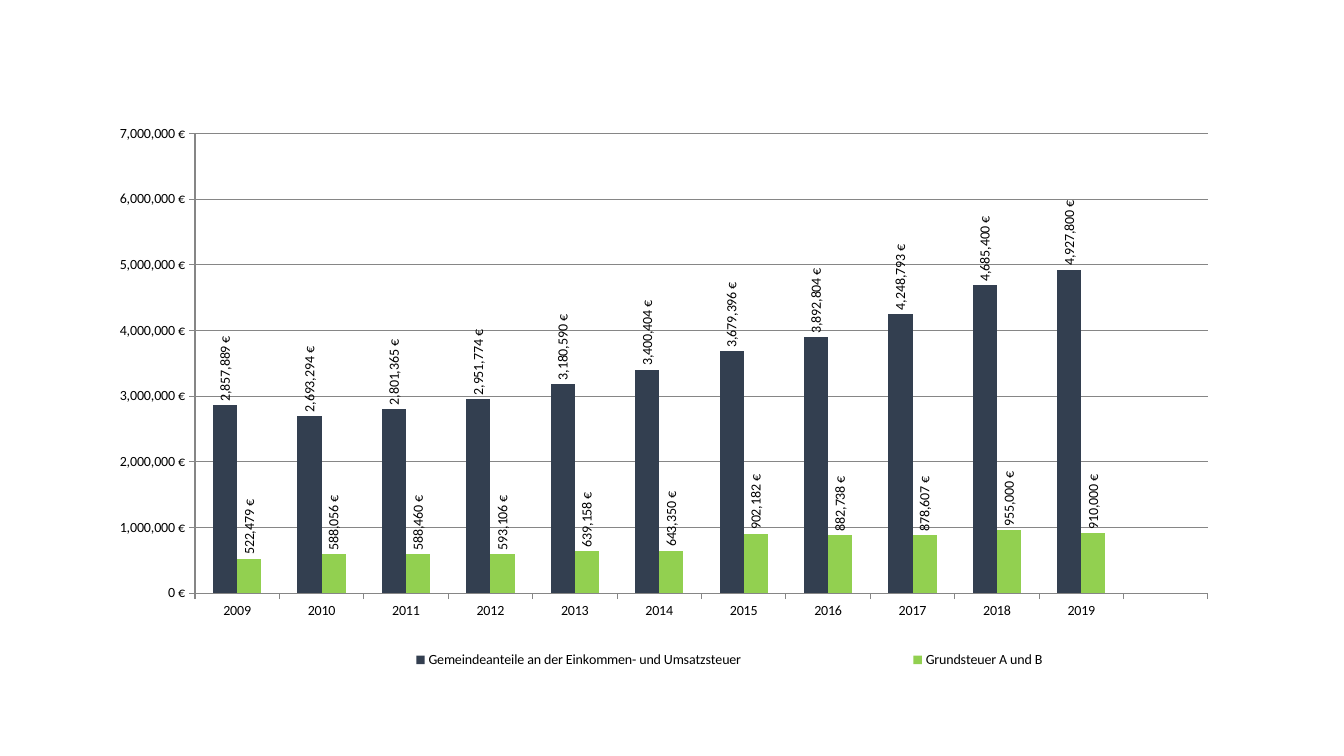
from dataclasses import dataclass

from pptx import Presentation
from pptx.chart.data import CategoryChartData as Data
from pptx.dml.color import RGBColor as RGB
from pptx.enum.chart import XL_CHART_TYPE as Kind
from pptx.enum.chart import XL_LABEL_POSITION as Spot
from pptx.enum.chart import XL_LEGEND_POSITION as Side
from pptx.enum.chart import XL_TICK_MARK as Tick
from pptx.oxml import parse_xml
from pptx.oxml.ns import nsdecls
from pptx.util import Cm, Pt


@dataclass(frozen=True)
class Theme:
    font: str = "Calibri"
    size: float = 10
    text: str = "000000"
    rule: str = "868686"
    income: str = "333F50"
    land: str = "92D050"


THEME = Theme()
EURO = '#,##0\\ "€"'
YEARS = [str(year) for year in range(2009, 2020)] + [""]
TAXES = [
    ("Gemeindeanteile an der Einkommen- und Umsatzsteuer", THEME.income,
     [2857889, 2693294, 2801365, 2951774, 3180590, 3400404,
      3679396, 3892804, 4248793, 4685400, 4927800, None]),
    ("Grundsteuer A und B", THEME.land,
     [522479, 588056, 588460, 593106, 639158, 643350,
      902182, 882738, 878607, 955000, 910000, None]),
]


def layout(box, inner=False):
    """Manual layout element; box holds x, y, w, h as shares of the chart."""
    target = '<c:layoutTarget val="inner"/>' if inner else ""
    modes = '<c:xMode val="edge"/><c:yMode val="edge"/>'
    sizes = "".join(f'<c:{key} val="{val}"/>' for key, val in zip("xywh", box))
    return parse_xml(f'<c:layout {nsdecls("c")}><c:manualLayout>{target}{modes}'
                     f"{sizes}</c:manualLayout></c:layout>")


def place(part, box, after=None, inner=False):
    """Give a chart part a manual layout in place of any it has."""
    for old in part.xpath("c:layout"):
        part.remove(old)
    spot = 0 if after is None else part.index(after) + 1
    part.insert(spot, layout(box, inner))


def style_font(font):
    looks = {"name": THEME.font, "size": Pt(THEME.size), "bold": False}
    for key, val in looks.items():
        setattr(font, key, val)
    font.color.rgb = RGB.from_string(THEME.text)


def style_line(line):
    line.color.rgb = RGB.from_string(THEME.rule)
    line.width = Pt(0.75)


def style_axes(chart):
    limits = {"minimum_scale": 0, "maximum_scale": 7000000,
              "major_unit": 1000000, "has_major_gridlines": True}
    for key, val in limits.items():
        setattr(chart.value_axis, key, val)
    chart.category_axis.has_major_gridlines = False
    for axis in (chart.value_axis, chart.category_axis):
        axis.major_tick_mark = Tick.OUTSIDE
        axis.minor_tick_mark = Tick.NONE
        style_line(axis.format.line)
        style_font(axis.tick_labels.font)
    style_line(chart.value_axis.major_gridlines.format.line)
    marks = chart.value_axis.tick_labels
    marks.number_format = EURO
    marks.number_format_is_linked = False


def style_bars(plot):
    plot.gap_width = 150
    plot.overlap = 0
    plot.vary_by_categories = False
    looks = {"show_value": True, "number_format": EURO,
             "number_format_is_linked": False, "position": Spot.OUTSIDE_END}
    for bars, (_, color, _) in zip(plot.series, TAXES):
        bars.format.fill.solid()
        bars.format.fill.fore_color.rgb = RGB.from_string(color)
        bars.invert_if_negative = False
        labels = bars.data_labels
        style_font(labels.font)
        for key, val in looks.items():
            setattr(labels, key, val)


def tax_chart(slide, left, top, width, height):
    data = Data(number_format=EURO)
    data.categories = YEARS
    for name, _, sums in TAXES:
        data.add_series(name, sums)
    frame = slide.shapes.add_chart(Kind.COLUMN_CLUSTERED, left, top,
                                   width, height, data)
    chart = frame.chart
    chart.has_title = False
    style_font(chart.font)
    style_axes(chart)
    style_bars(chart.plots[0])

    chart.has_legend = True
    chart.legend.position = Side.RIGHT
    chart.legend.include_in_layout = False
    style_font(chart.legend.font)

    root = chart.element if hasattr(chart, "element") else chart._chartSpace
    for body in root.xpath(".//c:dLbls//a:bodyPr"):
        body.set("rot", "-5400000")
        body.set("vert", "horz")
    place(root.xpath(".//c:plotArea")[0], (0.084, 0.029, 0.874, 0.813), inner=True)
    legend = root.xpath(".//c:legend")[0]
    place(legend, (0.13, 0.93, 0.83, 0.06), after=legend.xpath("c:legendPos")[0])


def main():
    deck = Presentation()
    deck.slide_width, deck.slide_height = Cm(33.87), Cm(19.05)
    slide = deck.slides.add_slide(deck.slide_layouts[6])
    tax_chart(slide, Cm(2.46), Cm(2.95), Cm(29.21), Cm(14.25))
    deck.save("out.pptx")


if __name__ == "__main__":
    main()
